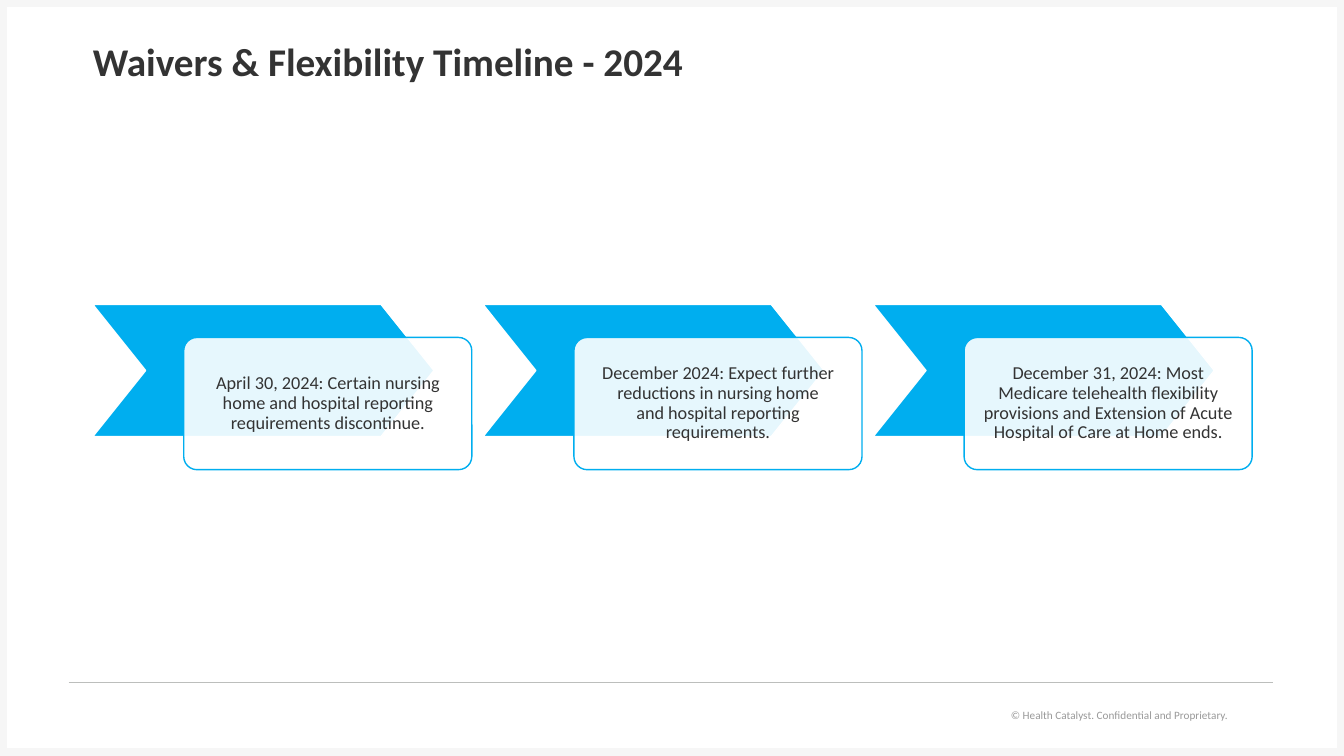
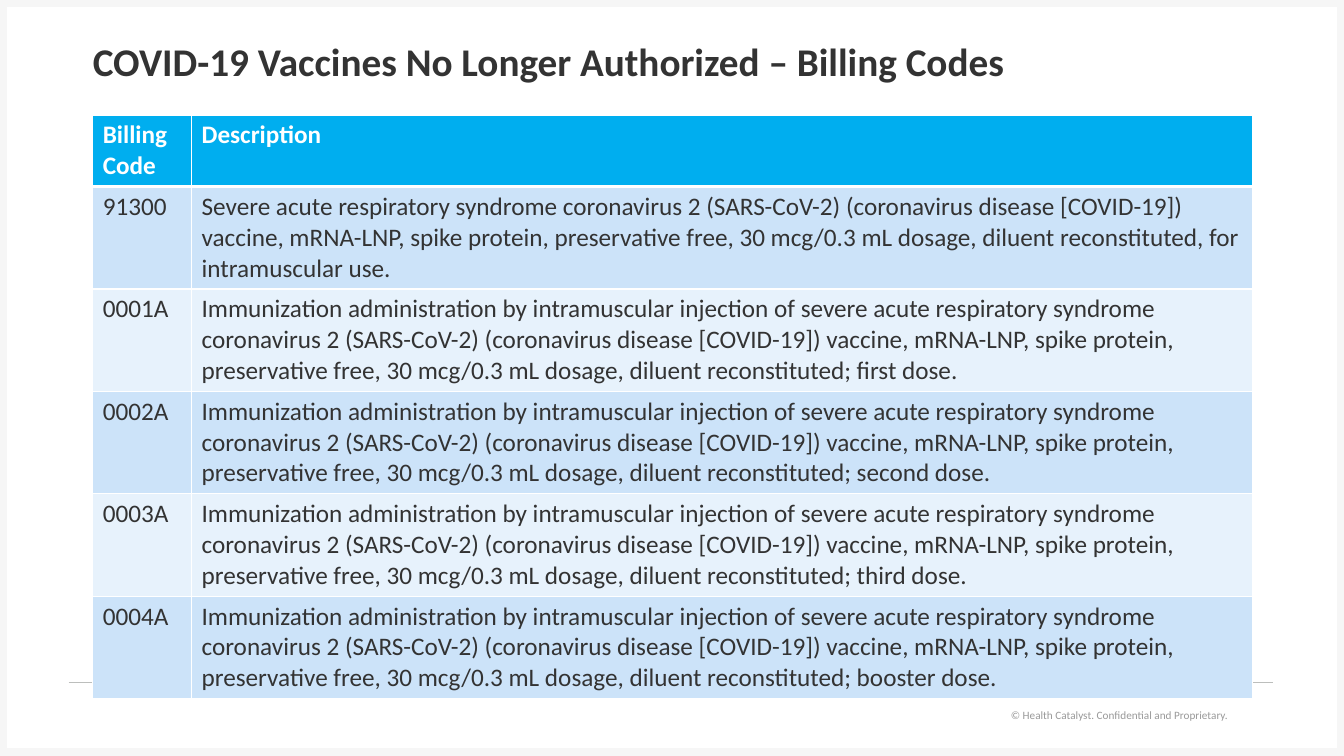
from pptx import Presentation, util as u
from pptx.dml.color import RGBColor
from pptx.enum import shapes, text
from pptx.oxml.ns import qn
from lxml import etree

SLIDE_W, SLIDE_H = 13.33, 7.5
MARGIN, CONTENT_W = 0.92, 11.5
FONT = "Calibri"
HARD_SPACE = chr(160)
WHITE = RGBColor(0xFF, 0xFF, 0xFF)
INK = RGBColor(0x33, 0x33, 0x33)
BLUE = RGBColor(0x00, 0xAE, 0xEF)
BAND_DARK = RGBColor(0xCC, 0xE3, 0xF9)
BAND_LIGHT = RGBColor(0xE7, 0xF2, 0xFC)
EDGE = RGBColor(0xF6, 0xF6, 0xF6)
RULE = RGBColor(0xBC, 0xBE, 0xBC)
FOOTER_INK = RGBColor(0x99, 0x99, 0x99)

MILESTONES = [
    "April 30, 2024: Certain nursing home and hospital reporting requirements discontinue.",
    "December 2024: Expect further reductions in nursing home "
    f"and{HARD_SPACE}hospital reporting requirements.",
    "December 31, 2024: Most Medicare telehealth flexibility provisions and "
    "Extension of Acute Hospital of Care at Home ends.",
]
VACCINE = (
    "evere acute respiratory syndrome coronavirus 2 (SARS-CoV-2) "
    "(coronavirus disease [COVID-19]) vaccine, mRNA-LNP, spike protein, "
    "preservative free, 30 mcg/0.3 mL dosage, diluent reconstituted"
)
DOSES = {"0001A": "first", "0002A": "second", "0003A": "third", "0004A": "booster"}
CODES = [("Billing Code", "Description"), ("91300", f"S{VACCINE}, for intramuscular use.")]
CODES += [
    (code, f"Immunization administration by intramuscular injection of s{VACCINE}; {dose} dose.")
    for code, dose in DOSES.items()
]


def inches(*lengths):
    return [u.Inches(length) for length in lengths]


def style(paragraph, size, color, bold=False, align=text.PP_ALIGN.LEFT):
    paragraph.alignment = align
    font = paragraph.font
    font.name, font.size, font.bold = FONT, u.Pt(size), bold
    font.color.rgb = color


def add_box(slide, kind, box, fill=None, line=None, width=1):
    shape = slide.shapes.add_shape(kind, *inches(*box))
    shape.shadow.inherit = False
    if fill is None:
        shape.fill.background()
    else:
        shape.fill.solid()
        shape.fill.fore_color.rgb = fill
    if line is None:
        shape.line.fill.background()
    else:
        shape.line.color.rgb = line
        shape.line.width = u.Pt(width)
    return shape


def add_footer(slide, box):
    left, top, width, height = box
    rule = slide.shapes.add_connector(
        shapes.MSO_CONNECTOR.STRAIGHT, *inches(left, top, left + width, top)
    )
    rule.line.color.rgb = RULE
    rule.line.width = u.Pt(0.75)
    etree.SubElement(rule._element.spPr, qn("a:effectLst"))
    notice_w = 2.45
    notice_left = left + width - notice_w - 0.35
    notice = add_box(slide, shapes.MSO_SHAPE.RECTANGLE,
                     (notice_left, top + 0.2, notice_w, height), WHITE)
    frame = notice.text_frame
    frame.text = "© Health Catalyst. Confidential and Proprietary."
    style(frame.paragraphs[0], 8, FOOTER_INK, align=text.PP_ALIGN.RIGHT)


def add_titled_slide(deck, heading):
    slide = deck.slides.add_slide(deck.slide_layouts[5])
    add_box(slide, shapes.MSO_SHAPE.RECTANGLE,
            (0.02, 0.02, SLIDE_W - 0.04, SLIDE_H - 0.04), line=EDGE, width=7.75)
    add_footer(slide, (0.68, 6.77, 11.95, 0.24))
    title = slide.shapes.title
    title.left, title.top, title.width, title.height = inches(MARGIN, 0.4, CONTENT_W, 0.46)
    frame = title.text_frame
    frame.text = heading
    frame.auto_size = text.MSO_AUTO_SIZE.NONE
    frame.vertical_anchor = text.MSO_ANCHOR.MIDDLE
    frame.margin_left = 0
    style(frame.paragraphs[0], 28, INK, bold=True)
    frame.paragraphs[0].line_spacing = 0.9
    return slide


def add_milestone(slide, box, wording):
    left, top, width, height = box
    step_h = height * 0.8
    chevron = add_box(slide, shapes.MSO_SHAPE.CHEVRON,
                      (left, top, width * 0.9, step_h), BLUE, WHITE)
    chevron.adjustments[0] = 0.4
    card = add_box(slide, shapes.MSO_SHAPE.ROUNDED_RECTANGLE,
                   (left + width * 0.24, top + height - step_h, width * 0.76, step_h),
                   WHITE, BLUE)
    card.adjustments[0] = 0.1
    tint = card._element.spPr.find(qn("a:solidFill"))[0]
    etree.SubElement(tint, qn("a:alpha"), val="90000")
    frame = card.text_frame
    frame.text = wording
    frame.word_wrap = True
    frame.vertical_anchor = text.MSO_ANCHOR.MIDDLE
    frame.margin_left = frame.margin_right = u.Inches(0.1)
    frame.margin_top = frame.margin_bottom = u.Inches(0.1)
    style(frame.paragraphs[0], 13, INK, align=text.PP_ALIGN.CENTER)
    frame.paragraphs[0].line_spacing = 0.9


def add_timeline(slide, box, milestones):
    left, top, width, height = box
    gap = 0.11
    step_w = (width - gap * (len(milestones) - 1)) / len(milestones)
    for index, wording in enumerate(milestones):
        add_milestone(slide, (left + index * (step_w + gap), top, step_w, height), wording)


def set_borders(cell, top, bottom):
    properties = cell._tc.get_or_add_tcPr()
    widths = {"a:lnL": 1, "a:lnR": 1, "a:lnT": top, "a:lnB": bottom}
    for position, (tag, width) in enumerate(widths.items()):
        border = etree.Element(qn(tag), w=str(u.Pt(width)))
        fill = etree.SubElement(border, qn("a:solidFill"))
        etree.SubElement(fill, qn("a:srgbClr"), val=str(WHITE))
        properties.insert(position, border)


def add_code_table(slide, box, rows):
    left, top, width, height = box
    table = slide.shapes.add_table(len(rows), 2, *inches(left, top, width, height)).table
    code_w, header_h = 0.98, 0.7
    table.columns[0].width, table.columns[1].width = inches(code_w, width - code_w)
    for index, entries in enumerate(rows):
        header = index == 0
        row_h = header_h if header else (height - header_h) / (len(rows) - 1)
        table.rows[index].height = u.Inches(row_h)
        band = BLUE if header else (BAND_LIGHT, BAND_DARK)[index % 2]
        for cell, wording in zip(table.rows[index].cells, entries):
            cell.text = wording
            cell.fill.solid()
            cell.fill.fore_color.rgb = band
            style(cell.text_frame.paragraphs[0], 18, WHITE if header else INK, bold=header)
            set_borders(cell, top=3 if index == 1 else 1, bottom=3 if header else 1)


def main():
    deck = Presentation()
    deck.slide_width, deck.slide_height = inches(SLIDE_W, SLIDE_H)
    timeline = add_titled_slide(deck, "Waivers & Flexibility Timeline - 2024")
    add_timeline(timeline, (MARGIN, 3.02, CONTENT_W, 1.64), MILESTONES)
    vaccines = add_titled_slide(deck, "COVID-19 Vaccines No Longer Authorized – Billing Codes")
    add_code_table(vaccines, (MARGIN, 1.14, CONTENT_W, 5.7), CODES)
    deck.save("out.pptx")


if __name__ == "__main__":
    main()
